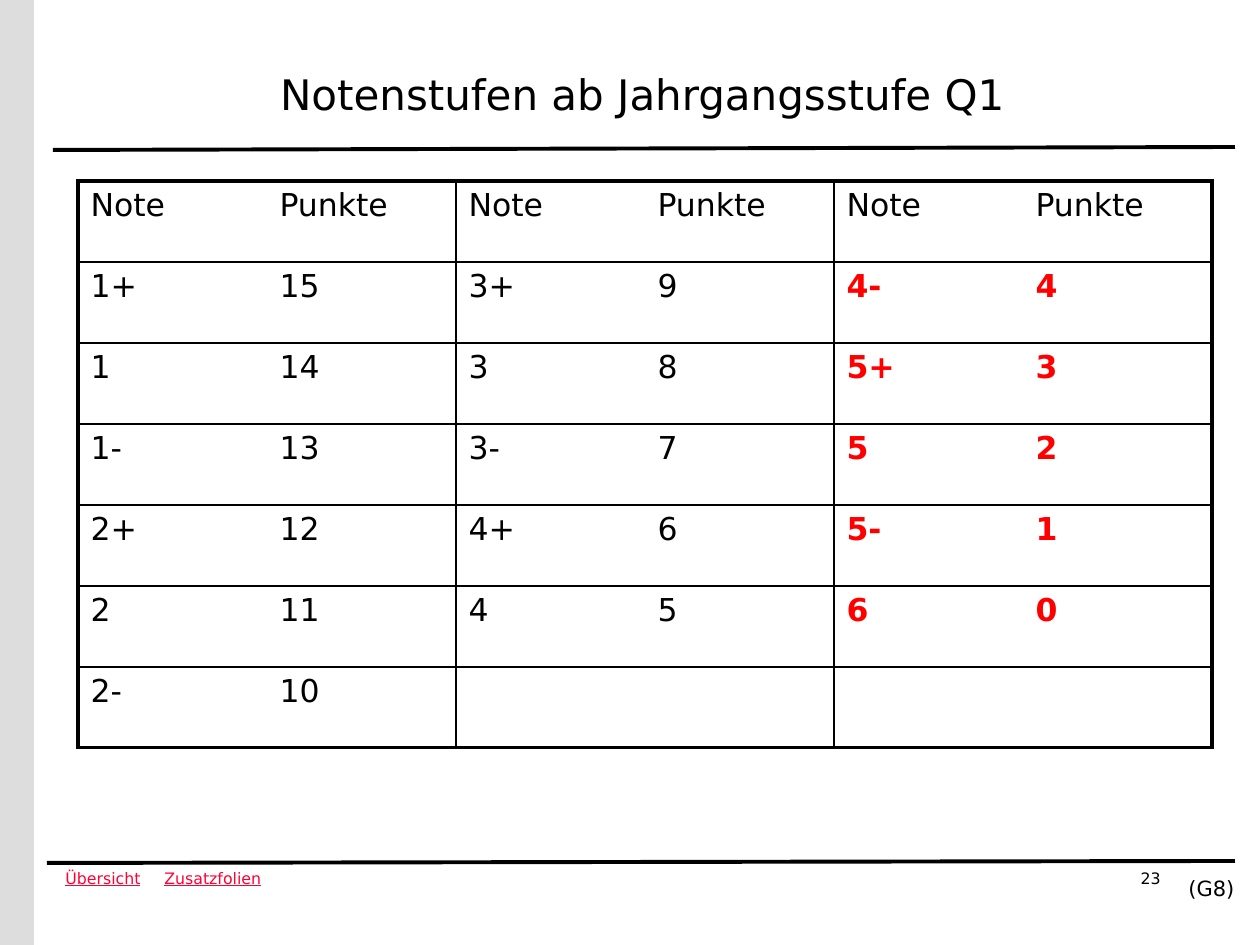
from lxml.etree import SubElement
from pptx import Presentation
from pptx.dml.color import RGBColor
from pptx.enum.shapes import MSO_CONNECTOR, MSO_SHAPE
from pptx.enum.text import MSO_ANCHOR, MSO_AUTO_SIZE, PP_ALIGN
from pptx.oxml.ns import qn
from pptx.util import Emu, Pt

BLACK = RGBColor(0, 0, 0)
GREY = RGBColor(0xDD, 0xDD, 0xDD)
LINK = RGBColor(0xFF, 0x00, 0x33)
RED = RGBColor(0xFF, 0x00, 0x00)

PX_PER_INCH = 126
THICK, THIN = 2.25, 1

GRADES = [
    ["Note", "Punkte", "Note", "Punkte", "Note", "Punkte"],
    ["1+", "15", "3+", "9", "4-", "4"],
    ["1", "14", "3", "8", "5+", "3"],
    ["1-", "13", "3-", "7", "5", "2"],
    ["2+", "12", "4+", "6", "5-", "1"],
    ["2", "11", "4", "5", "6", "0"],
    ["2-", "10", "", "", "", ""],
]


def px(*lengths):
    return [Emu(round(length * 914400 / PX_PER_INCH)) for length in lengths]


class SlideBuilder:
    font_name = "DejaVu Sans"

    def __init__(self, slide):
        self.slide = slide
        self.shapes = slide.shapes

    def styled_run(self, paragraph, text, size, color=BLACK, **extra):
        run = paragraph.add_run()
        run.text = text
        values = {"name": self.font_name, "size": Pt(size), **extra}
        for attribute, value in values.items():
            setattr(run.font, attribute, value)
        run.font.color.rgb = color

    def text(self, box, text, size, color=BLACK, align=PP_ALIGN.LEFT, frame=None, **extra):
        text_frame = self.shapes.add_textbox(*px(*box)).text_frame
        values = {"word_wrap": True, "auto_size": MSO_AUTO_SIZE.NONE, **(frame or {})}
        for attribute, value in values.items():
            setattr(text_frame, attribute, value)
        paragraph = text_frame.paragraphs[0]
        paragraph.alignment = align
        self.styled_run(paragraph, text, size, color, **extra)

    def bar(self, box, color):
        bar = self.shapes.add_shape(MSO_SHAPE.RECTANGLE, *px(*box))
        bar.shadow.inherit = False
        bar.fill.solid()
        bar.fill.fore_color.rgb = color
        bar.line.fill.background()

    def rule(self, *ends):
        rule = self.shapes.add_connector(MSO_CONNECTOR.STRAIGHT, *px(*ends))
        rule.line.color.rgb = BLACK
        rule.line.width = Pt(THICK)
        SubElement(rule._element.spPr, qn("a:effectLst"))

    def border(self, cell, side, width):
        properties = cell._tc.get_or_add_tcPr()
        line = SubElement(properties, qn(f"a:ln{side}"), w=str(int(Pt(width))))
        if width:
            fill = SubElement(line, qn("a:solidFill"))
            SubElement(fill, qn("a:srgbClr"), val=str(BLACK))
        else:
            SubElement(line, qn("a:noFill"))

    def grade_table(self, left, top, column_width, row_height, rows):
        row_count, column_count = len(rows), len(rows[0])
        size = column_width * column_count, row_height * row_count
        table = self.shapes.add_table(row_count, column_count, *px(left, top, *size)).table
        table.first_row = table.horz_banding = False
        for r, row in enumerate(rows):
            for c, text in enumerate(row):
                cell = table.cell(r, c)
                # Each Note/Punkte pair is framed; the whole table has a thick outline
                widths = {
                    "L": THICK if c == 0 else THIN if c % 2 == 0 else 0,
                    "R": THICK if c == column_count - 1 else THIN if c % 2 else 0,
                    "T": THICK if r == 0 else THIN,
                    "B": THICK if r == row_count - 1 else THIN,
                }
                for side, width in widths.items():
                    self.border(cell, side, width)
                cell.fill.background()
                # Deficient grades stand out in the last pair of columns
                deficient = r > 0 and c >= 4
                if text:
                    self.styled_run(cell.text_frame.paragraphs[0], text, 18,
                                    RED if deficient else BLACK, bold=deficient)


def main():
    presentation = Presentation()
    presentation.slide_width, presentation.slide_height = px(1260, 945)
    builder = SlideBuilder(presentation.slides.add_slide(presentation.slide_layouts[6]))

    # Frame: header rule, footer rule, side bar
    builder.rule(53, 150, 1235, 147)
    builder.rule(47, 863, 1235, 861)
    builder.bar((0, 0, 34, 945), GREY)

    # Footer
    fitted = {"auto_size": MSO_AUTO_SIZE.SHAPE_TO_FIT_TEXT}
    unwrapped = {**fitted, "word_wrap": False}
    for label, left, width in [("Übersicht", 53, 101), ("Zusatzfolien", 152, 122)]:
        builder.text((left, 863, width, 32), label, 9, LINK, frame=unwrapped, underline=True)
    builder.text((1176, 869, 84, 38), "(G8)", 12, frame=fitted)
    builder.text((1063, 863, 110, 63), "23", 9, align=PP_ALIGN.RIGHT)

    # Title
    builder.text((47, 39, 1191, 110), "Notenstufen ab Jahrgangsstufe Q1", 24,
                 align=PP_ALIGN.CENTER, frame={"vertical_anchor": MSO_ANCHOR.MIDDLE})

    # Grades and points
    builder.grade_table(78, 181, 189, 81, GRADES)

    presentation.save("out.pptx")


if __name__ == "__main__":
    main()
